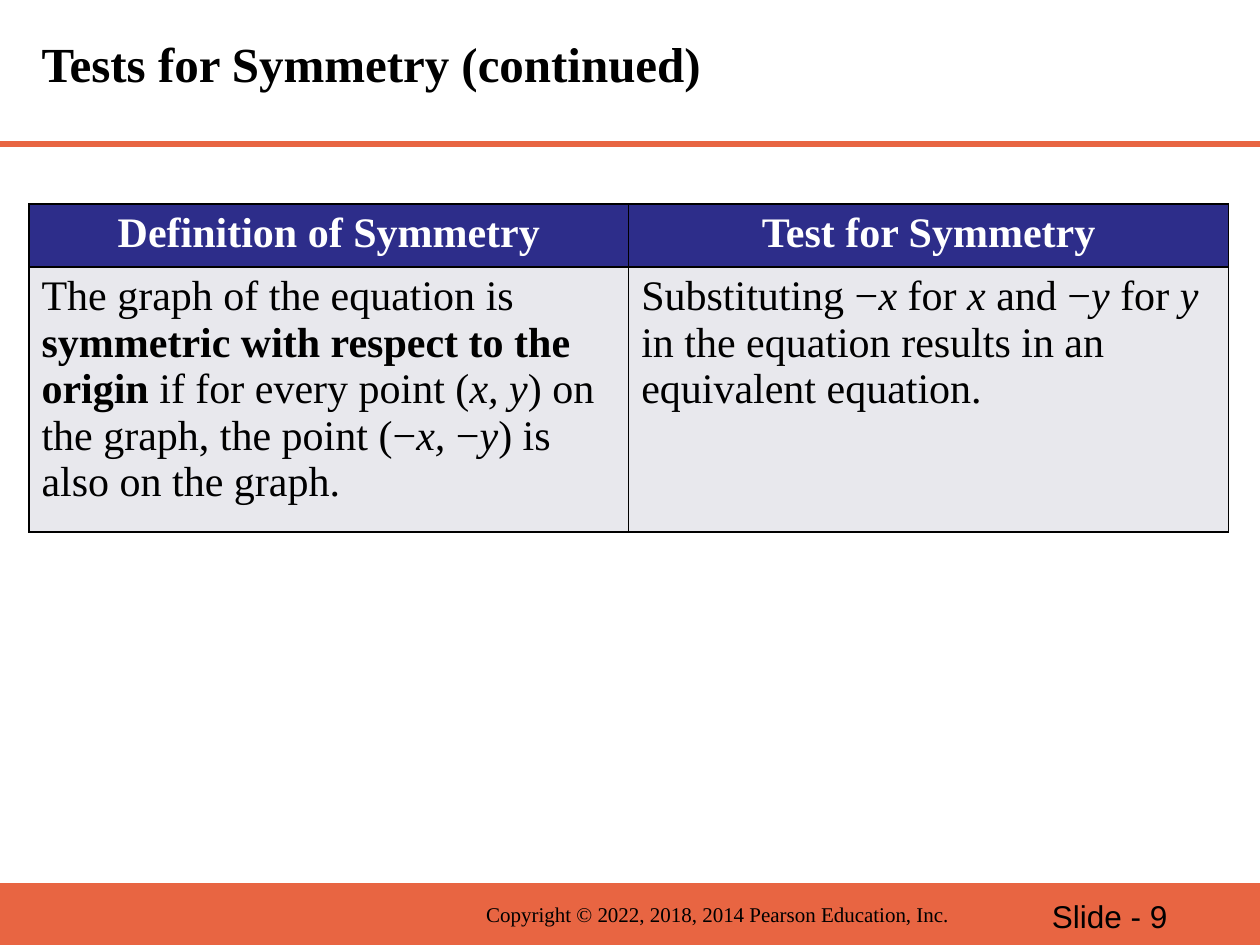
from lxml.etree import SubElement
from pptx import Presentation
from pptx.dml.color import RGBColor
from pptx.enum.shapes import MSO_CONNECTOR, MSO_SHAPE
from pptx.enum.text import MSO_ANCHOR, PP_ALIGN
from pptx.oxml import parse_xml
from pptx.oxml.ns import nsdecls, qn
from pptx.util import Inches, Pt

COLORS = {
    "accent": "E86542",
    "header": "2D2D8A",
    "body": "E8E8ED",
    "text": "000000",
    "light": "FFFFFF",
}
SERIF = "Times New Roman"
SANS = "Arial"

HEADERS = ["Definition of Symmetry", "Test for Symmetry"]
BODY = [
    [
        [
            ("The graph of the equation is ", ""),
            ("symmetric with respect to the origin ", "b"),
            ("if for every point (", ""),
            ("x, y", "i"),
            (") on the graph, the point (−", ""),
            ("x, ", "i"),
            ("−", ""),
            ("y", "i"),
            (") is", ""),
        ],
        [("also on the graph.", "")],
    ],
    [
        [
            ("Substituting −", ""),
            ("x", "i"),
            (" for ", ""),
            ("x", "i"),
            (" and −", ""),
            ("y", "i"),
            (" for ", ""),
            ("y", "i"),
            (" in the equation results in an equivalent equation.", ""),
        ],
    ],
]


def color(name):
    return RGBColor.from_string(COLORS[name])


def set_font(paragraph, size, name=SERIF, bold=False, color_name="text"):
    font = paragraph.font
    font.size = Pt(size)
    font.name = name
    font.bold = bold
    font.color.rgb = color(color_name)


def add_title(slide, text):
    title = slide.shapes.title
    title.left, title.top = Inches(0.23), Inches(0)
    title.width, title.height = Inches(9.52), Inches(1.09)
    title.text_frame.text = text
    title.text_frame.vertical_anchor = MSO_ANCHOR.MIDDLE
    paragraph = title.text_frame.paragraphs[0]
    paragraph.alignment = PP_ALIGN.LEFT
    paragraph.line_spacing = 0.8
    set_font(paragraph, 28, bold=True)


def add_rule(slide, top):
    rule = slide.shapes.add_connector(
        MSO_CONNECTOR.STRAIGHT, Inches(0), Inches(top), Inches(10), Inches(top)
    )
    rule.line.color.rgb = color("accent")
    rule.line.width = Pt(3.5)
    SubElement(rule._element.spPr, qn("a:effectLst"))


def add_footer_band(slide):
    band = slide.shapes.add_shape(
        MSO_SHAPE.RECTANGLE, Inches(0), Inches(7.01), Inches(10), Inches(0.5)
    )
    band.shadow.inherit = False
    band.fill.solid()
    band.fill.fore_color.rgb = color("accent")
    band.line.fill.background()


def add_label(slide, text, left, top, width, height, size, name=SERIF):
    box = slide.shapes.add_textbox(
        Inches(left), Inches(top), Inches(width), Inches(height)
    )
    box.text_frame.word_wrap = True
    paragraph = box.text_frame.paragraphs[0]
    paragraph.text = text
    set_font(paragraph, size, name)


def style_cell(cell, fill_name):
    cell.fill.solid()
    cell.fill.fore_color.rgb = color(fill_name)
    properties = cell._tc.get_or_add_tcPr()
    for index, side in enumerate(("lnL", "lnR", "lnT", "lnB")):
        border = parse_xml(
            f'<a:{side} {nsdecls("a")} w="{Pt(1)}"><a:solidFill>'
            f'<a:srgbClr val="{COLORS["text"]}"/></a:solidFill></a:{side}>'
        )
        properties.insert(index, border)


def fill_body_cell(cell, paragraphs):
    frame = cell.text_frame
    for index, runs in enumerate(paragraphs):
        paragraph = frame.add_paragraph() if index else frame.paragraphs[0]
        set_font(paragraph, 24)
        for text, style in runs:
            run = paragraph.add_run()
            run.text = text
            if style == "b":
                run.font.bold = True
            elif style == "i":
                run.font.italic = True


def add_symmetry_table(slide):
    table = slide.shapes.add_table(
        2, 2, Inches(0.23), Inches(1.62), Inches(9.52), Inches(0.88)
    ).table
    for column, (header, paragraphs) in enumerate(zip(HEADERS, BODY)):
        header_cell = table.cell(0, column)
        header_cell.text = header
        paragraph = header_cell.text_frame.paragraphs[0]
        paragraph.alignment = PP_ALIGN.CENTER
        set_font(paragraph, 24, bold=True, color_name="light")
        style_cell(header_cell, "header")
        body_cell = table.cell(1, column)
        fill_body_cell(body_cell, paragraphs)
        style_cell(body_cell, "body")


def add_footer(slide):
    add_footer_band(slide)
    add_label(slide, "Copyright © 2022, 2018, 2014 Pearson Education, Inc.",
              3.76, 7.11, 3.89, 0.3, 12)
    add_label(slide, "Slide - 9", 8.25, 7.07, 1.5, 0.4, 18, SANS)


def main():
    presentation = Presentation()
    presentation.slide_width = Inches(10)
    presentation.slide_height = Inches(7.5)
    slide = presentation.slides.add_slide(presentation.slide_layouts[5])
    add_footer(slide)
    add_rule(slide, 1.14)
    add_title(slide, "Tests for Symmetry (continued)")
    add_symmetry_table(slide)
    presentation.save("out.pptx")


if __name__ == "__main__":
    main()
